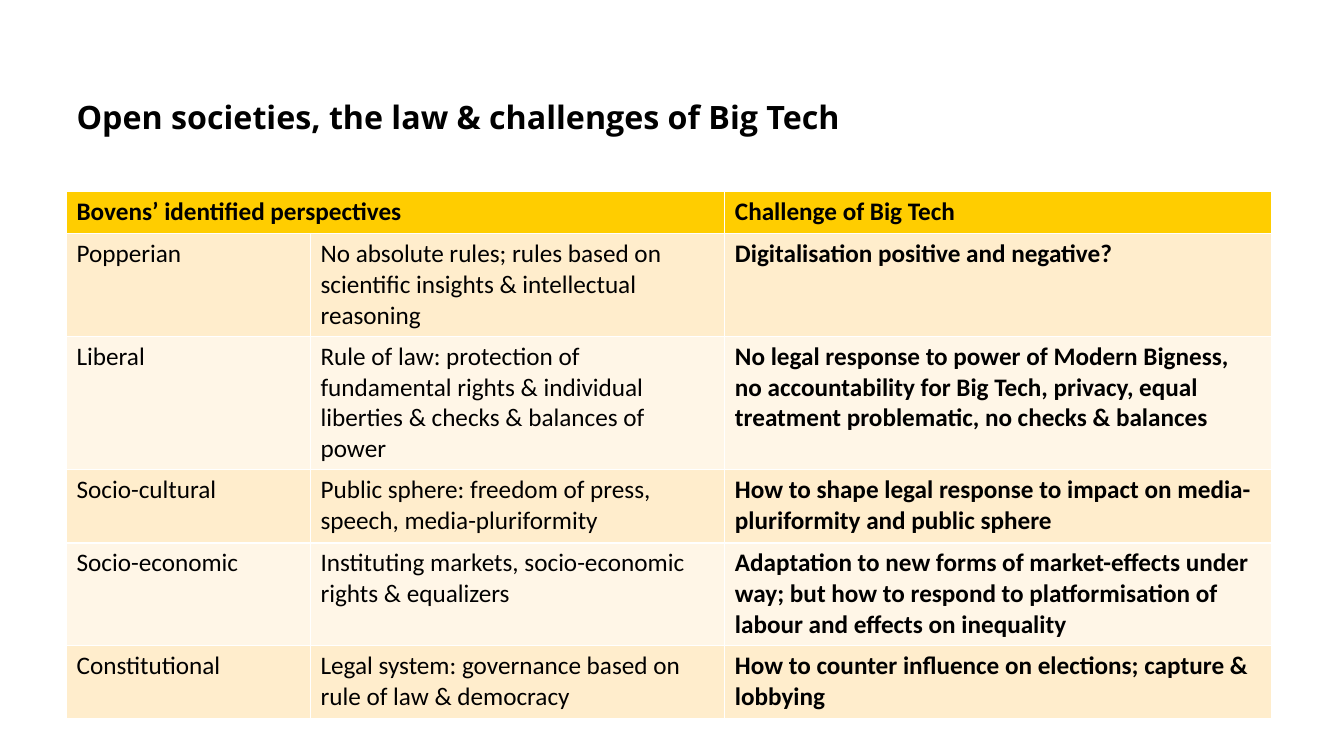
from dataclasses import dataclass

from pptx import Presentation
from pptx.dml.color import RGBColor
from pptx.enum.text import MSO_ANCHOR, MSO_AUTO_SIZE, PP_ALIGN
from pptx.util import Inches, Pt


@dataclass(frozen=True)
class Theme:
    text: RGBColor = RGBColor.from_string("000000")
    header: RGBColor = RGBColor.from_string("FFCD00")
    bands: tuple = (RGBColor.from_string("FFEDCC"), RGBColor.from_string("FFF6E7"))
    title_font: str = "Open Sans"
    table_font: str = "Calibri"
    title_size: Pt = Pt(23)
    table_size: Pt = Pt(18)


theme = Theme()


def format_paragraph(para, name, size, bold):
    para.alignment = PP_ALIGN.LEFT
    para.font.name = name
    para.font.size = size
    para.font.bold = bold
    para.font.color.rgb = theme.text


deck = Presentation()
deck.slide_width = Inches(13.33)
deck.slide_height = Inches(7.5)
slide = deck.slides.add_slide(deck.slide_layouts[5])

title = slide.shapes.title
title.left, title.top = Inches(0.66), Inches(0.92)
title.width, title.height = Inches(10.14), Inches(1.37)
title.text_frame.text = "Open societies, the law & challenges of Big Tech"
title.text_frame.auto_size = MSO_AUTO_SIZE.NONE
title.text_frame.vertical_anchor = MSO_ANCHOR.TOP
format_paragraph(title.text_frame.paragraphs[0], theme.title_font, theme.title_size, True)

perspectives = [
    ("Bovens’ identified perspectives", "", "Challenge of Big Tech"),
    ("Popperian",
     "No absolute rules; rules based on scientific insights & intellectual reasoning",
     "Digitalisation positive and negative?"),
    ("Liberal",
     "Rule of law: protection of fundamental rights & individual liberties "
     "& checks & balances of power",
     "No legal response to power of Modern Bigness, no accountability for Big Tech, "
     "privacy, equal treatment problematic, no checks & balances"),
    ("Socio-cultural",
     "Public sphere: freedom of press, speech, media-pluriformity",
     "How to shape legal response to impact on media-pluriformity and public sphere"),
    ("Socio-economic",
     "Instituting markets, socio-economic rights & equalizers",
     "Adaptation to new forms of market-effects under way; but how to respond to "
     "platformisation of labour and effects on inequality"),
    ("Constitutional",
     "Legal system: governance based on rule of law & democracy",
     "How to counter influence on elections; capture & lobbying"),
]
column_widths = (2.42, 4.11, 5.42)
row_heights = (0.42, 0.73, 1.04, 0.73, 0.73, 0.73)

# The default table style supplies the white rules, thicker under the header.
table = slide.shapes.add_table(
    len(perspectives), len(column_widths), Inches(0.66), Inches(1.9),
    Inches(sum(column_widths)), Inches(sum(row_heights)),
).table
for column, width in zip(table.columns, column_widths):
    column.width = Inches(width)
for row, height in zip(table.rows, row_heights):
    row.height = Inches(height)
table.cell(0, 0).merge(table.cell(0, 1))

for row_index, texts in enumerate(perspectives):
    is_header = row_index == 0
    for column_index, text in enumerate(texts):
        cell = table.cell(row_index, column_index)
        cell.fill.solid()
        cell.fill.fore_color.rgb = theme.header if is_header else theme.bands[(row_index - 1) % 2]
        cell.text = text
        format_paragraph(cell.text_frame.paragraphs[0], theme.table_font, theme.table_size,
                         is_header or column_index == 2)

deck.save("out.pptx")
